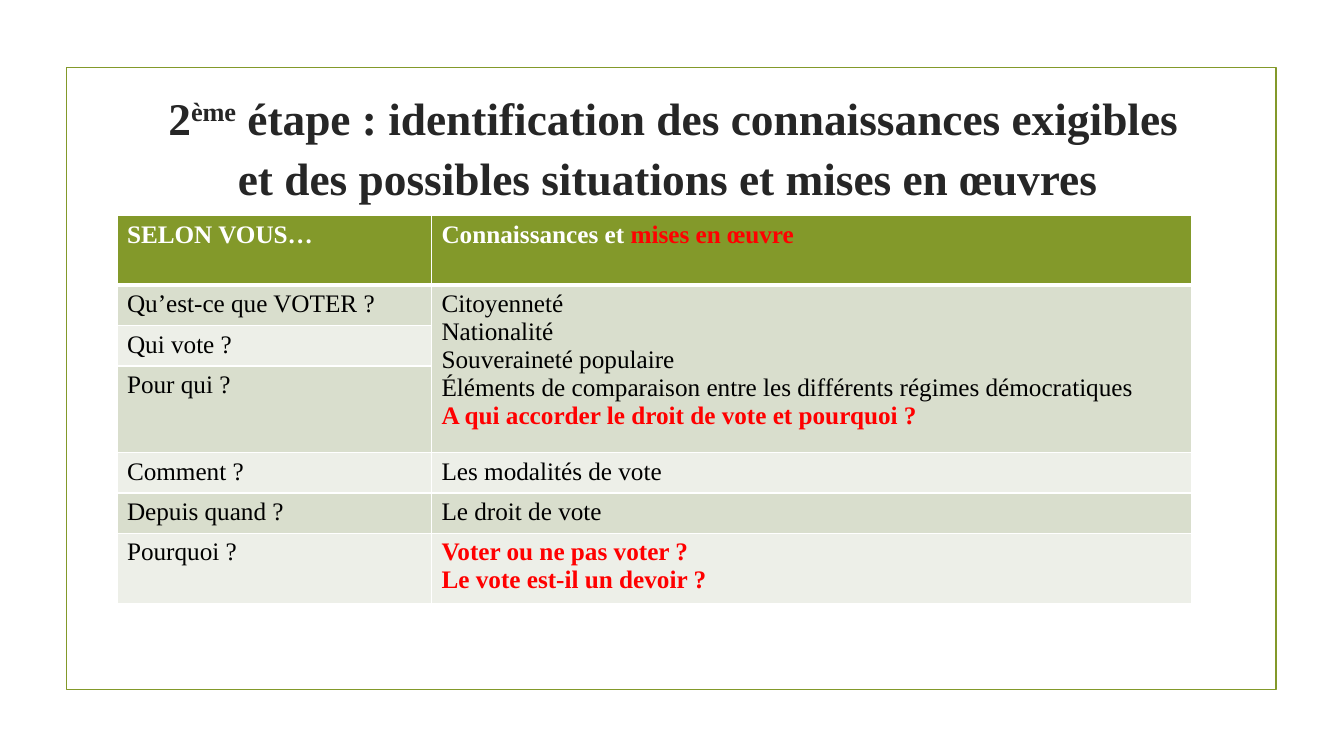
from lxml import etree
from pptx import Presentation
from pptx.dml.color import RGBColor
from pptx.enum.shapes import MSO_SHAPE as SHAPE
from pptx.enum.text import MSO_ANCHOR as ANCHOR, PP_ALIGN as ALIGN
from pptx.oxml.ns import qn
from pptx.util import Pt

PX = 9144
FONT = "Times New Roman"
OLIVE = RGBColor(0x83, 0x99, 0x2A)
BAND_DARK = RGBColor(0xD9, 0xDE, 0xCD)
BAND_LIGHT = RGBColor(0xED, 0xEF, 0xE8)
WHITE = RGBColor(0xFF, 0xFF, 0xFF)
BLACK = RGBColor(0, 0, 0)
INK = RGBColor(0x26, 0x26, 0x26)
RED = RGBColor(0xFF, 0, 0)

HEAD = {"bold": True, "color": WHITE}
BODY = {"bold": False, "color": BLACK}
KEY = {"bold": True, "color": RED}

TITLE = [
    ("2", 0),
    ("ème", 30000),
    (" étape : identification des connaissances exigibles et des possibles "
     "situations et mises en œuvres ", 0),
]
COLUMNS = [312, 754]
ROWS = [
    (69, [[("SELON VOUS…", HEAD)]],
     [[("Connaissances et ", HEAD), ("mises en œuvre", KEY)]]),
    (39, [[("Qu’est-ce que VOTER ?", BODY)]],
     [[("Citoyenneté", BODY)],
      [("Nationalité", BODY)],
      [("Souveraineté populaire", BODY)],
      [("Éléments de comparaison entre les différents régimes démocratiques", BODY)],
      [("A qui accorder le droit de vote et pourquoi ?", KEY)]]),
    (39, [[("Qui vote ?", BODY)]], []),
    (86, [[("Pour qui ?", BODY)]], []),
    (39, [[("Comment ?", BODY)]], [[("Les modalités de vote", BODY)]]),
    (39, [[("Depuis quand ?", BODY)]], [[("Le droit de vote", BODY)]]),
    (69, [[("Pourquoi ?", BODY)]],
     [[("Voter ou ne pas voter ?", KEY)], [("Le vote est-il un devoir ?", KEY)]]),
]


def emu(*lengths):
    """Turn px lengths into EMU."""
    return [length * PX for length in lengths]


def add_run(p, text, size, bold, color):
    """Append a formatted run to a paragraph."""
    r = p.add_run()
    r.text = text
    for name, value in {"name": FONT, "size": Pt(size), "bold": bold}.items():
        setattr(r.font, name, value)
    r.font.color.rgb = color
    return r


def set_borders(cell, widths):
    """Give a cell white borders of the given widths in points."""
    tcPr = cell._tc.get_or_add_tcPr()
    for i, (side, width) in enumerate(widths.items()):
        ln = etree.Element(qn(f"a:ln{side}"), w=str(Pt(width)))
        fill = etree.SubElement(ln, qn("a:solidFill"))
        etree.SubElement(fill, qn("a:srgbClr"), val=str(WHITE))
        tcPr.insert(i, ln)


def add_frame(s, x, y, w, h):
    """Draw the thin frame around the slide content."""
    sp = s.shapes.add_shape(SHAPE.RECTANGLE, *emu(x, y, w, h))
    sp.shadow.inherit = False
    sp.fill.background()
    sp.line.color.rgb = OLIVE
    sp.line.width = Pt(1.25)


def add_title(s, x, y, w, h):
    """Write the centred title with its raised ordinal."""
    tf = s.shapes.add_textbox(*emu(x, y, w, h)).text_frame
    tf.word_wrap = True
    tf.vertical_anchor = ANCHOR.MIDDLE
    p = tf.paragraphs[0]
    p.alignment = ALIGN.CENTER
    p.line_spacing = 1.11
    for text, baseline in TITLE:
        r = add_run(p, text, 32.4, True, INK)
        if baseline:
            r.font._element.set("baseline", str(baseline))


def fill_cell(cell, paragraphs):
    """Write paragraphs of formatted runs into a cell."""
    tf = cell.text_frame
    for i, runs in enumerate(paragraphs):
        p = tf.add_paragraph() if i else tf.paragraphs[0]
        for text, style in runs:
            add_run(p, text, 18, **style)


def add_questions(s, x, y):
    """Build the table of questions and expected knowledge."""
    heights = [row[0] for row in ROWS]
    box = emu(x, y, sum(COLUMNS), sum(heights))
    table = s.shapes.add_table(len(ROWS), len(COLUMNS), *box).table
    for column, width in zip(table.columns, COLUMNS):
        column.width = width * PX
    for i, (height, *cells) in enumerate(ROWS):
        table.rows[i].height = height * PX
        band = BAND_DARK if i % 2 else BAND_LIGHT
        for j, paragraphs in enumerate(cells):
            cell = table.cell(i, j)
            cell.fill.solid()
            cell.fill.fore_color.rgb = band if i else OLIVE
            set_borders(cell, {"L": 1, "R": 1, "T": 3 if i == 1 else 1,
                               "B": 1 if i else 3})
            fill_cell(cell, paragraphs)
    table.cell(1, 1).merge(table.cell(3, 1))


def main():
    """Build and save the slide."""
    prs = Presentation()
    prs.slide_width, prs.slide_height = emu(1333, 750)
    s = prs.slides.add_slide(prs.slide_layouts[6])
    add_frame(s, 66, 67, 1200, 617)
    add_title(s, 142, 72, 1052, 143)
    add_questions(s, 116, 214)
    prs.save("out.pptx")


if __name__ == "__main__":
    main()
